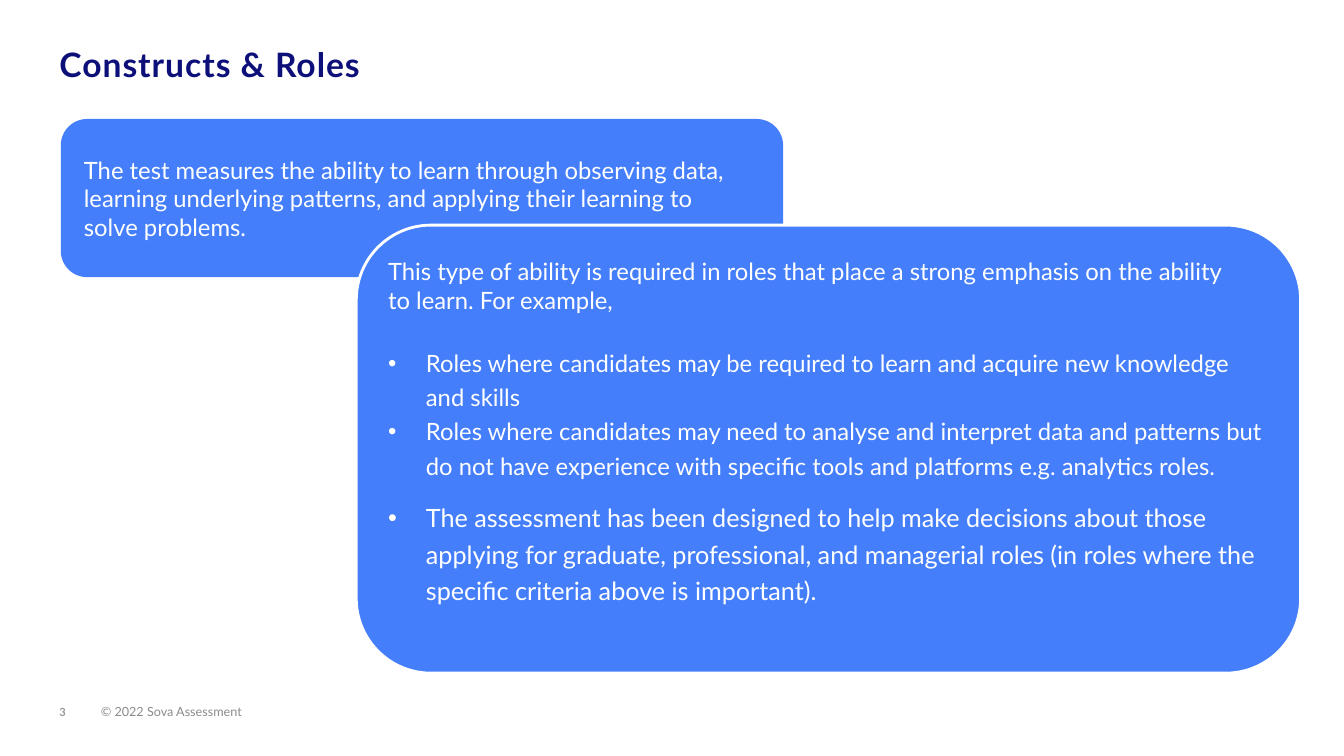
import pptx
import pptx.dml.color
import pptx.enum.shapes
import pptx.enum.text
import pptx.oxml.ns
import pptx.util
from lxml import etree

Pt = pptx.util.Pt
ALIGN = pptx.enum.text.PP_ALIGN
ANCHOR = pptx.enum.text.MSO_ANCHOR
BLUE, WHITE, NAVY = "447EFA", "FFFFFF", "0E107A"


def color(code):
    return pptx.dml.color.RGBColor.from_string(code)


def place(shape, left, top, width, height):
    shape.left, shape.top = Pt(left), Pt(top)
    shape.width, shape.height = Pt(width), Pt(height)


def set_frame(shape, anchor, insets):
    frame = shape.text_frame
    frame.word_wrap = True
    frame.auto_size = pptx.enum.text.MSO_AUTO_SIZE.NONE
    frame.vertical_anchor = anchor
    (frame.margin_left, frame.margin_top,
     frame.margin_right, frame.margin_bottom) = map(Pt, insets)
    return frame


def add_run(para, text, size, tint, bold=False):
    run = para.add_run()
    run.text = text
    font = run.font
    font.name, font.size, font.bold = "Lato", Pt(size), bold
    font.color.rgb = color(tint)
    return run


def add_lines(para, lines, size):
    """Fill a left-aligned paragraph with lines split by line breaks."""
    para.alignment = ALIGN.LEFT
    for index, line in enumerate(lines):
        if index:
            para.add_line_break()
        add_run(para, line, size, WHITE)


def add_bullet(frame, text, size, before):
    para = frame.add_paragraph()
    props = para._p.get_or_add_pPr()
    props.set("marL", str(Pt(27)))
    props.set("indent", str(-Pt(27)))
    para.line_spacing = 1.2
    para.space_before = Pt(before)
    qn = pptx.oxml.ns.qn
    etree.SubElement(props, qn("a:buFont"), typeface="Arial")
    etree.SubElement(props, qn("a:buChar"), char="•")
    add_lines(para, [text], size)


def add_card(slide, box, anchor, insets):
    kind = pptx.enum.shapes.MSO_SHAPE.ROUNDED_RECTANGLE
    card = slide.shapes.add_shape(kind, *map(Pt, box))
    card.shadow.inherit = False
    card.fill.solid()
    card.fill.fore_color.rgb = color(BLUE)
    card.line.fill.background()
    return card, set_frame(card, anchor, insets)


def add_note(slide, box, left, text, size, tint, bold=False):
    note = slide.shapes.add_textbox(*map(Pt, box))
    frame = set_frame(note, ANCHOR.BOTTOM, (left, 0, 0, 26.6))
    add_run(frame.paragraphs[0], text, size, tint, bold)


def set_title(slide, text):
    title = slide.shapes.title
    place(title, 0, 31.7, 960, 24.5)
    para = set_frame(title, ANCHOR.TOP, (42.5, 0, 113, 0)).paragraphs[0]
    para.alignment = ALIGN.LEFT
    run = add_run(para, text, 24, NAVY, True)
    run._r.get_or_add_rPr().set("spc", "70")


def main():
    deck = pptx.Presentation()
    deck.slide_width, deck.slide_height = Pt(960), Pt(540)
    slide = deck.slides.add_slide(deck.slide_layouts[5])
    set_title(slide, "Constructs & Roles")

    # Footer
    add_note(slide, (72, 497.5, 142, 42.5), 0,
             "© 2022 Sova Assessment", 9, "8A8B8C")
    add_note(slide, (0, 497.5, 70.5, 42.5), 42.5, "3", 8, "999A9B", True)

    # What the test measures
    _, frame = add_card(slide, (43.4, 85, 516, 113), ANCHOR.MIDDLE,
                        (11, 3.6, 7.2, 3.6))
    add_lines(frame.paragraphs[0], [
        "The test measures the ability to learn through observing data,",
        "learning underlying patterns, and applying their learning to",
        "solve problems."], 17)

    # Roles that need the ability
    card, frame = add_card(slide, (254.5, 160.8, 674.5, 320), ANCHOR.TOP,
                           (7.2, 7.2, 7.2, 3.6))
    card.line.color.rgb = color(WHITE)
    card.line.width = Pt(2)
    add_lines(frame.paragraphs[0], [
        "This type of ability is required in roles that place a strong "
        "emphasis on the ability",
        "to learn. For example,"], 17)
    bullets = [
        ("Roles where candidates may be required to learn and acquire new "
         "knowledge and skills", 17, 20.4),
        ("Roles where candidates may need to analyse and interpret data and "
         "patterns but do not have experience with specific tools and "
         "platforms e.g. analytics roles.", 17, 0),
        ("The assessment has been designed to help make decisions about "
         "those applying for graduate, professional, and managerial roles "
         "(in roles where the specific criteria above is important).", 18, 12),
    ]
    for text, size, before in bullets:
        add_bullet(frame, text, size, before)

    deck.save("out.pptx")


if __name__ == "__main__":
    main()
